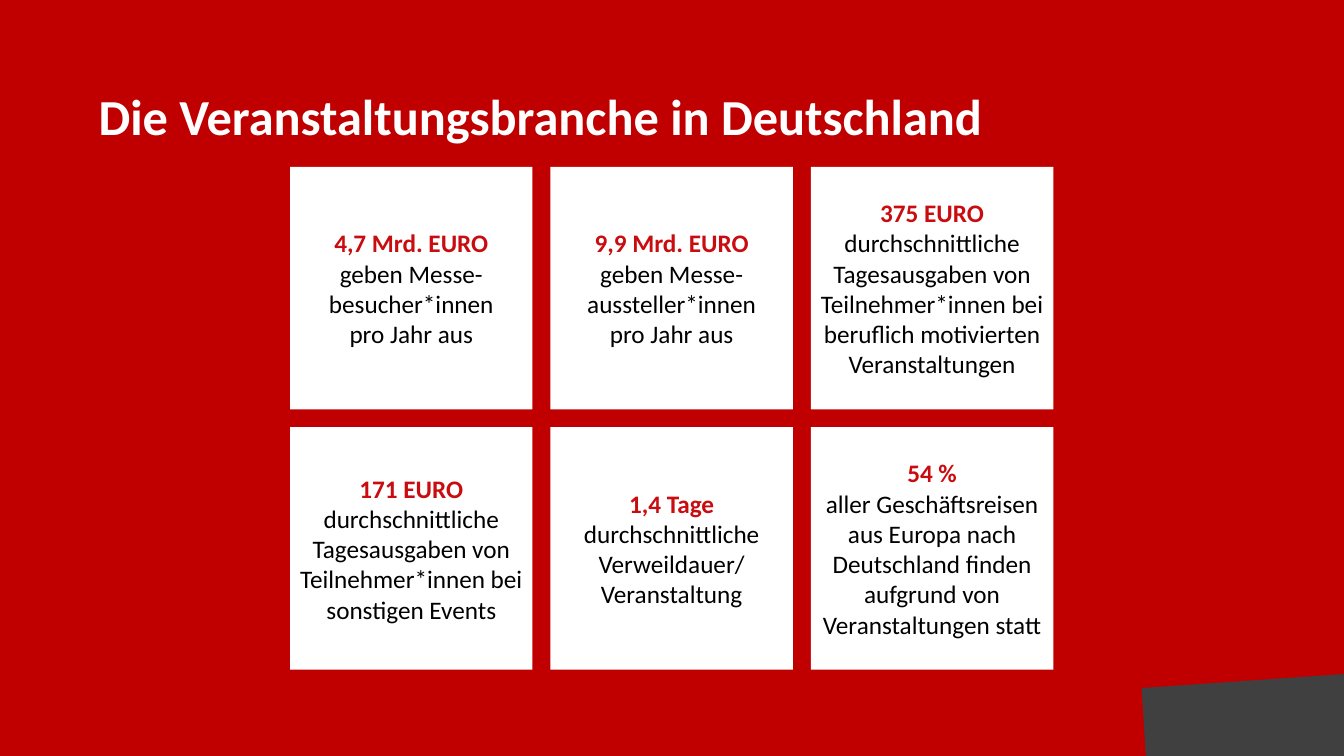
from pptx import Presentation
from pptx.dml.color import RGBColor
from pptx.enum.shapes import MSO_SHAPE
from pptx.enum.text import MSO_ANCHOR, PP_ALIGN
from pptx.util import Pt

RED = RGBColor(0xC0, 0x00, 0x00)
FIGURE_RED = RGBColor(0xC9, 0x0C, 0x0F)
GREY = RGBColor(0x40, 0x40, 0x40)
WHITE = RGBColor(0xFF, 0xFF, 0xFF)
BLACK = RGBColor(0x00, 0x00, 0x00)
FONT = "Calibri"

TILE_LEFT, TILE_TOP = 207.2, 119.2
TILE_SIZE, TILE_STEP = 173.2, 186
COLUMNS = 3

# Key figure first, then the lines that explain it
TILES = [
    ("4,7 Mrd. EURO", "geben Messe-besucher*innen", "pro Jahr aus"),
    ("9,9 Mrd. EURO", "geben Messe-aussteller*innen", "pro Jahr aus"),
    ("375 EURO", "durchschnittliche Tagesausgaben von Teilnehmer*innen bei "
     "beruflich motivierten Veranstaltungen"),
    ("171 EURO", "durchschnittliche Tagesausgaben von Teilnehmer*innen bei "
     "sonstigen Events"),
    ("1,4 Tage", "durchschnittliche Verweildauer/ Veranstaltung"),
    ("54 %", "aller Geschäftsreisen aus Europa nach Deutschland finden "
     "aufgrund von Veranstaltungen statt"),
]


def add_text(para, text, size, color, bold):
    span = para.add_run()
    span.text = text
    span.font.name = FONT
    span.font.size = Pt(size)
    span.font.bold = bold
    span.font.color.rgb = color


deck = Presentation()
deck.slide_width, deck.slide_height = Pt(960), Pt(540)
page = deck.slides.add_slide(deck.slide_layouts[5])
page.background.fill.solid()
page.background.fill.fore_color.rgb = RED

# Grey corner
outline = page.shapes.build_freeform(Pt(815.5), Pt(491.5))
outline.add_line_segments(
    [(Pt(960), Pt(481.5)), (Pt(960), Pt(540)), (Pt(818.5), Pt(540))])
corner = outline.convert_to_shape()
corner.shadow.inherit = False
corner.fill.solid()
corner.fill.fore_color.rgb = GREY
corner.line.fill.background()

# Title
title = page.shapes.title
title.left, title.top, title.width, title.height = Pt(63.2), Pt(62), Pt(708), Pt(57)
title.text_frame.word_wrap = True
title.text_frame.vertical_anchor = MSO_ANCHOR.TOP
heading = title.text_frame.paragraphs[0]
heading.alignment = PP_ALIGN.LEFT
heading.line_spacing = 0.9
add_text(heading, "Die Veranstaltungsbranche in Deutschland", 36, WHITE, True)

# Tiles with key figures
for index, lines in enumerate(TILES):
    row, column = divmod(index, COLUMNS)
    tile = page.shapes.add_shape(
        MSO_SHAPE.RECTANGLE,
        Pt(TILE_LEFT + column * TILE_STEP), Pt(TILE_TOP + row * TILE_STEP),
        Pt(TILE_SIZE), Pt(TILE_SIZE))
    tile.shadow.inherit = False
    tile.fill.solid()
    tile.fill.fore_color.rgb = WHITE
    tile.line.fill.background()
    frame = tile.text_frame
    frame.word_wrap = True
    frame.vertical_anchor = MSO_ANCHOR.MIDDLE
    frame.margin_left = frame.margin_right = Pt(5)
    for number, line in enumerate(lines):
        para = frame.add_paragraph() if number else frame.paragraphs[0]
        para.alignment = PP_ALIGN.CENTER
        is_figure = number == 0
        add_text(para, line, 18, FIGURE_RED if is_figure else BLACK, is_figure)

deck.save("out.pptx")
